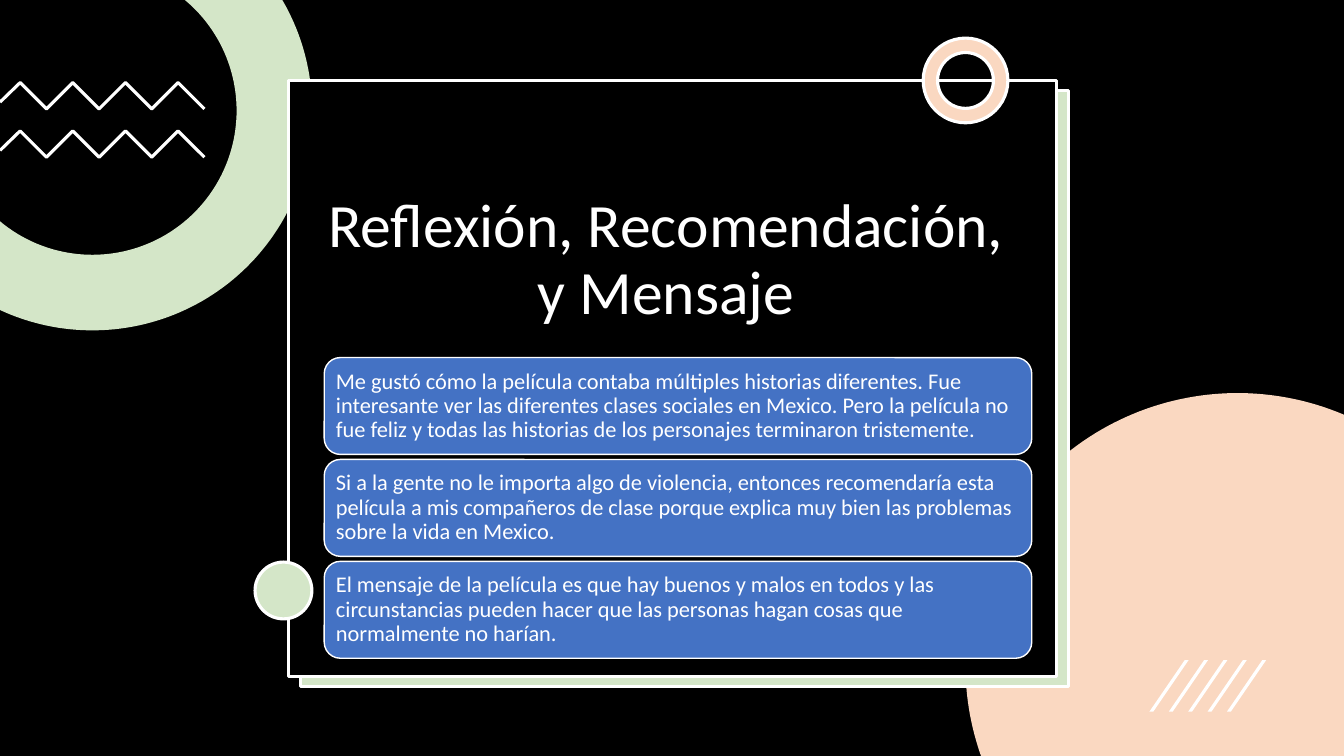
from collections import namedtuple
from math import acos, asin, cos, pi, sin

from pptx import Presentation
from pptx.dml.color import RGBColor
from pptx.enum.shapes import MSO_SHAPE
from pptx.enum.text import MSO_ANCHOR, MSO_AUTO_SIZE, PP_ALIGN
from pptx.util import Pt

BLACK = RGBColor(0x00, 0x00, 0x00)
WHITE = RGBColor(0xFF, 0xFF, 0xFF)
GREEN = RGBColor(0xD4, 0xE6, 0xC8)
PEACH = RGBColor(0xFA, 0xD8, 0xC1)
BLUE = RGBColor(0x44, 0x72, 0xC4)

RECTANGLE = MSO_SHAPE.RECTANGLE
ROUNDED = MSO_SHAPE.ROUNDED_RECTANGLE
OVAL = MSO_SHAPE.OVAL
DONUT = MSO_SHAPE.DONUT
SLANT = MSO_SHAPE.PARALLELOGRAM
LEFT = PP_ALIGN.LEFT
CENTER = PP_ALIGN.CENTER
BOTTOM = MSO_ANCHOR.BOTTOM
MIDDLE = MSO_ANCHOR.MIDDLE
NO_FIT = MSO_AUTO_SIZE.NONE

Box = namedtuple("Box", "left top width height")

TITLE_ONLY = 5
ARC_STEPS = 90
CARD_TEXTS = [
    "Me gustó cómo la película contaba múltiples historias diferentes. "
    "Fue interesante ver las diferentes clases sociales en Mexico. "
    "Pero la película no fue feliz y todas las historias de los personajes "
    "terminaron tristemente.",
    "Si a la gente no le importa algo de violencia, entonces recomendaría "
    "esta película a mis compañeros de clase porque explica muy bien las "
    "problemas sobre la vida en Mexico.",
    "El mensaje de la película es que hay buenos y malos en todos y las "
    "circunstancias pueden hacer que las personas hagan cosas que "
    "normalmente no harían.",
]


def set_values(target, values):
    for name, value in values.items():
        setattr(target, name, value)


def paint(shape, fill=None, line=None, width=2.25):
    shape.shadow.inherit = False
    if fill is None:
        shape.fill.background()
    else:
        shape.fill.solid()
        shape.fill.fore_color.rgb = fill
    if line is None:
        shape.line.fill.background()
    else:
        shape.line.color.rgb = line
        shape.line.width = Pt(width)


def add_preset(page, kind, box, fill, line=None, width=2.25, adjustment=None):
    shape = page.shapes.add_shape(kind, *(Pt(length) for length in box))
    if adjustment is not None:
        shape.adjustments[0] = adjustment
    paint(shape, fill, line, width)
    return shape


def add_outline(page, points, close, fill=None, line=None):
    (first_x, first_y), *others = [(Pt(x), Pt(y)) for x, y in points]
    builder = page.shapes.build_freeform(first_x, first_y)
    builder.add_line_segments(others, close=close)
    paint(builder.convert_to_shape(), fill, line)


def arc(center_x, center_y, radius, start, end):
    angles = [start + (end - start) * step / ARC_STEPS for step in range(ARC_STEPS + 1)]
    return [(center_x + radius * cos(a), center_y + radius * sin(a)) for a in angles]


def write(frame, text, frame_format, paragraph_format, size):
    set_values(frame, frame_format)
    para = frame.paragraphs[0]
    set_values(para, paragraph_format)
    span = para.add_run()
    span.text = text
    set_values(span.font, {"name": "Calibri", "size": Pt(size)})
    span.font.color.rgb = WHITE


def add_corner_ring(page, box, band):
    radius = box.width / 2
    center_x, center_y = box.left + radius, box.top + radius
    inner = radius - band
    outer_arc = arc(center_x, center_y, radius,
                    asin(-center_y / radius), acos(-center_x / radius))
    inner_arc = arc(center_x, center_y, inner,
                    acos(-center_x / inner), asin(-center_y / inner))
    add_outline(page, outer_arc + inner_arc, True, GREEN)


def add_corner_disc(page, box, page_box):
    radius = box.width / 2
    center_x, center_y = box.left + radius, box.top + radius
    start = -acos((page_box.width - center_x) / radius)
    end = -pi - asin((page_box.height - center_y) / radius)
    corner = (page_box.width, page_box.height)
    add_outline(page, arc(center_x, center_y, radius, start, end) + [corner], True, PEACH)


def add_zigzag(page, box):
    step = box.height
    first_peak = box.left + 14.4
    points = [(box.left, box.top + 14)]
    points += [(first_peak + index * step, box.top + index % 2 * step) for index in range(8)]
    add_outline(page, points, False, line=WHITE)


def add_panel(page, box):
    behind = box._replace(left=box.left + 8.8, top=box.top + 7.4)
    add_preset(page, RECTANGLE, behind, GREEN, WHITE)
    add_preset(page, RECTANGLE, box, BLACK, WHITE)
    ring_size = 60.5
    ring = Box(box.left + 483.7 - ring_size / 2, box.top - ring_size / 2, ring_size, ring_size)
    add_preset(page, DONUT, ring, PEACH, WHITE, adjustment=0.17)
    dot = Box(box.left - 23.8, box.top + 344, 40.6, 40.6)
    add_preset(page, OVAL, dot, GREEN, WHITE)


def add_title(page, box, text):
    title = page.shapes.title
    page.shapes.element.append(title.element)
    set_values(title, {name: Pt(value) for name, value in box._asdict().items()})
    write(title.text_frame, text,
          {"word_wrap": True, "auto_size": NO_FIT, "vertical_anchor": BOTTOM},
          {"alignment": CENTER, "line_spacing": 0.9}, 44)


def add_slashes(page, box, count):
    slash_width = 28
    step = (box.width - slash_width) / (count - 1)
    for index in range(count):
        slash = Box(box.left + index * step, box.top, slash_width, box.height)
        add_preset(page, SLANT, slash, WHITE, adjustment=0.9)


def add_cards(page, box, texts):
    gap = 3.6
    height = (box.height - gap * (len(texts) - 1)) / len(texts)
    margins = ("margin_left", "margin_top", "margin_right", "margin_bottom")
    frame_format = {"word_wrap": True, "auto_size": NO_FIT, "vertical_anchor": MIDDLE}
    frame_format.update(dict.fromkeys(margins, Pt(5)))
    for index, text in enumerate(texts):
        card_box = Box(box.left, box.top + index * (height + gap), box.width, height)
        card = add_preset(page, ROUNDED, card_box, BLUE, WHITE, 1)
        write(card.text_frame, text, frame_format,
              {"alignment": LEFT, "line_spacing": 0.9}, 16)


def build_page(deck, page_box):
    page = deck.slides.add_slide(deck.slide_layouts[TITLE_ONLY])
    page.background.fill.solid()
    page.background.fill.fore_color.rgb = BLACK
    add_corner_ring(page, Box(-91, -78, 314, 314), 54)
    add_corner_disc(page, Box(689.6, 280.8, 388.8, 388.8), page_box)
    for top in (59, 93.5):
        add_zigzag(page, Box(0, top, 146, 18.8))
    add_panel(page, Box(206, 57.5, 548.5, 425.5))
    add_title(page, Box(223.2, 107.3, 505.4, 130.3), "Reflexión, Recomendación, y Mensaje")
    add_slashes(page, Box(821, 471.6, 83.4, 36.8), 5)
    add_cards(page, Box(231.6, 255.4, 505.4, 214.8), CARD_TEXTS)


def main():
    deck = Presentation()
    page_box = Box(0, 0, 960, 540)
    set_values(deck, {"slide_width": Pt(page_box.width), "slide_height": Pt(page_box.height)})
    build_page(deck, page_box)
    deck.save("out.pptx")


if __name__ == "__main__":
    main()
